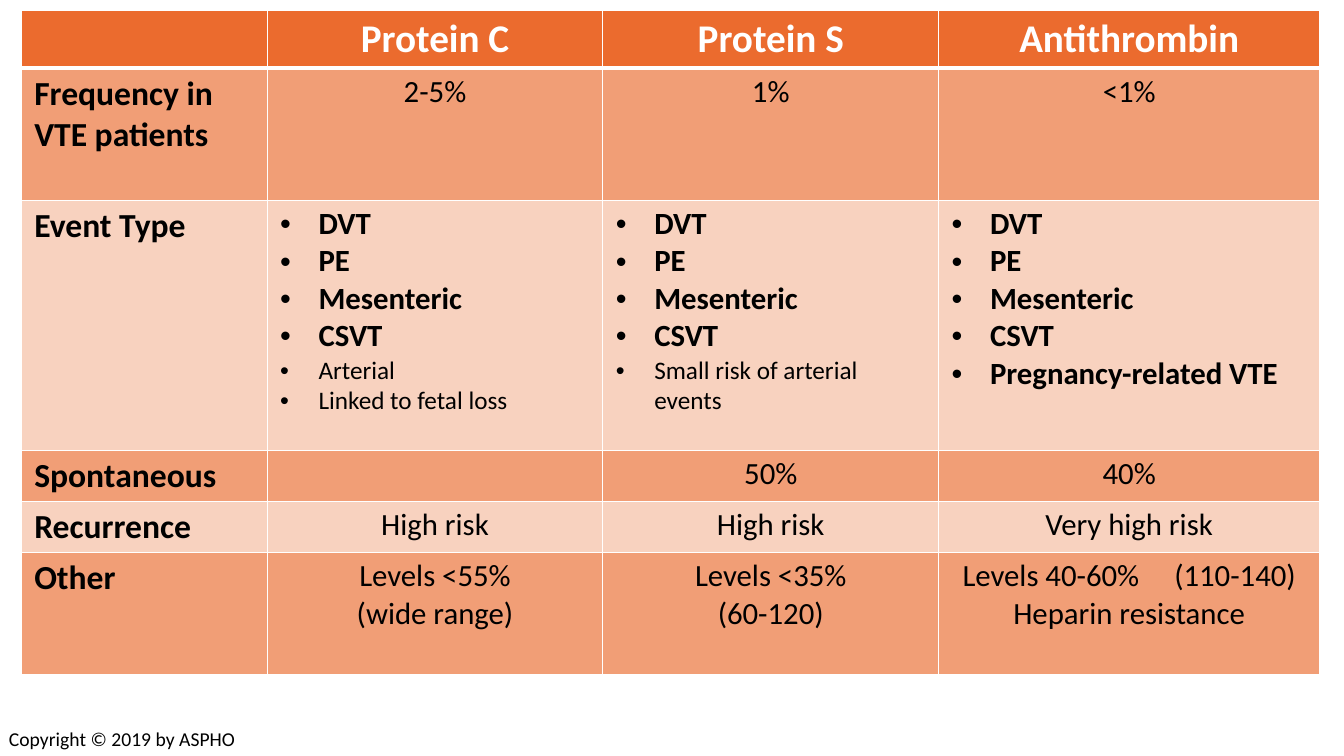
from dataclasses import dataclass

from lxml.etree import SubElement
from pptx import Presentation
from pptx.dml.color import RGBColor
from pptx.enum.text import PP_ALIGN
from pptx.oxml import parse_xml
from pptx.oxml.ns import nsdecls, qn
from pptx.util import Inches, Pt


@dataclass(frozen=True)
class Theme:
    """Colours, font and type sizes of the slide."""
    font: str = "Calibri"
    orange: str = "EB6B2E"
    white: str = "FFFFFF"
    black: str = "000000"
    dark: int = 65
    light: int = 30
    head: int = 28
    label: int = 24
    body: int = 22
    minor: int = 18
    foot: int = 14


THEME = Theme()
EVENTS = ["DVT", "PE", "Mesenteric", "CSVT"]
WIDTHS = [2.44, 3.33, 3.33, 3.78]


def write(para, text, size=THEME.body, bold=False, color=THEME.black,
          align=PP_ALIGN.LEFT, bullet=False, gap=0):
    """Fill a paragraph; a gap in points widens the space at each '|'."""
    para.alignment = align
    if bullet:
        props = para._p.get_or_add_pPr()
        props.set("marL", str(Inches(0.38)))
        props.set("indent", str(Inches(-0.38)))
        SubElement(props, qn("a:buFont"), typeface="Arial")
        SubElement(props, qn("a:buChar"), char="•")
    parts = text.split("|")
    for spot, part in enumerate(parts):
        runs = [part] if spot == len(parts) - 1 else [part, " "]
        for piece in runs:
            run = para.add_run()
            run.text = piece
            font = run.font
            font.name, font.size, font.bold = THEME.font, Pt(size), bold
            font.color.rgb = RGBColor.from_string(color)
            if piece == " ":
                run._r.get_or_add_rPr().set("spc", str(gap * 100))


def heading(text):
    """Return the single line of a header cell."""
    return [(text, dict(size=THEME.head, bold=True, color=THEME.white,
                        align=PP_ALIGN.CENTER))]


def label(text):
    """Return the single line of a row label."""
    return [(text, dict(size=THEME.label, bold=True))]


def plain(*texts):
    """Return centred lines."""
    return [(text, dict(align=PP_ALIGN.CENTER, gap=20)) for text in texts]


def points(main, minor=()):
    """Return bold bullets, then smaller plain ones."""
    return ([(text, dict(bold=True, bullet=True)) for text in main]
            + [(text, dict(size=THEME.minor, bullet=True)) for text in minor])


class Deck:
    """Holds the theme and the current slide."""

    def __init__(self, theme):
        """Start a deck with one blank slide."""
        self.theme = theme
        self.file = Presentation()
        self.file.slide_width = Inches(13.33)
        self.file.slide_height = Inches(7.5)
        self.slide = self.file.slides.add_slide(self.file.slide_layouts[6])

    def fill(self, cell, alpha):
        """Give a cell the orange fill at a percentage."""
        cell.fill.solid()
        cell.fill.fore_color.rgb = RGBColor.from_string(self.theme.orange)
        if alpha < 100:
            tint = cell._tc.tcPr.find(".//" + qn("a:srgbClr"))
            SubElement(tint, qn("a:alpha"), val=str(alpha * 1000))

    def border(self, cell, top, bottom):
        """Draw white lines round a cell."""
        sides = [("L", 1), ("R", 1), ("T", top), ("B", bottom)]
        for spot, (side, width) in enumerate(sides):
            cell._tc.tcPr.insert(spot, parse_xml(
                f'<a:ln{side} {nsdecls("a")} w="{Pt(width)}"><a:solidFill>'
                f'<a:srgbClr val="{self.theme.white}"/></a:solidFill></a:ln{side}>'))

    def cell(self, cell, lines, row):
        """Style one cell and write its lines."""
        tints = [self.theme.light, self.theme.dark]
        self.fill(cell, tints[row % 2] if row else 100)
        self.border(cell, 3 if row == 1 else 1, 1 if row else 3)
        cell.margin_left = cell.margin_right = Inches(0.13)
        cell.margin_top = cell.margin_bottom = Inches(0.05)
        frame = cell.text_frame
        for spot, (text, style) in enumerate(lines):
            para = frame.add_paragraph() if spot else frame.paragraphs[0]
            write(para, text, **style)

    def table(self, left, top, widths, rows):
        """Add a table from (height, cells) rows."""
        heights = [height for height, _ in rows]
        grid = self.slide.shapes.add_table(
            len(rows), len(widths), Inches(left), Inches(top),
            Inches(sum(widths)), Inches(sum(heights))).table
        grid.horz_banding = False
        for col, width in zip(grid.columns, widths):
            col.width = Inches(width)
        for row, (height, cells) in enumerate(rows):
            grid.rows[row].height = Inches(height)
            for col, lines in enumerate(cells):
                self.cell(grid.cell(row, col), lines, row)

    def text(self, left, top, width, height, text, **style):
        """Add a text box of one line."""
        box = self.slide.shapes.add_textbox(
            Inches(left), Inches(top), Inches(width), Inches(height))
        box.text_frame.word_wrap = True
        write(box.text_frame.paragraphs[0], text, **style)

    def save(self):
        """Save the deck."""
        self.file.save("out.pptx")


def main():
    """Build the slide."""
    rows = [
        (0.57, [[], heading("Protein C"), heading("Protein S"),
                heading("Antithrombin")]),
        (1.31, [label("Frequency in VTE patients"), plain("2-5%"),
                plain("1%"), plain("<1%")]),
        (2.48, [label("Event Type"),
                points(EVENTS, ["Arterial", "Linked to fetal loss"]),
                points(EVENTS, ["Small risk of arterial events"]),
                points(EVENTS + ["Pregnancy-related VTE"])]),
        (0.5, [label("Spontaneous"), [], plain("50%"), plain("40%")]),
        (0.5, [label("Recurrence"), plain("High risk"), plain("High risk"),
               plain("Very high risk")]),
        (1.21, [label("Other"), plain("Levels <55%", "(wide range)"),
                plain("Levels <35%", "(60-120)"),
                plain("Levels 40-60%|(110-140)", "Heparin resistance")]),
    ]
    deck = Deck(THEME)
    deck.table(0.21, 0.1, WIDTHS, rows)
    deck.text(-0.01, 7.16, 2.48, 0.34, "Copyright © 2019 by ASPHO",
              size=THEME.foot)
    deck.save()


if __name__ == "__main__":
    main()
